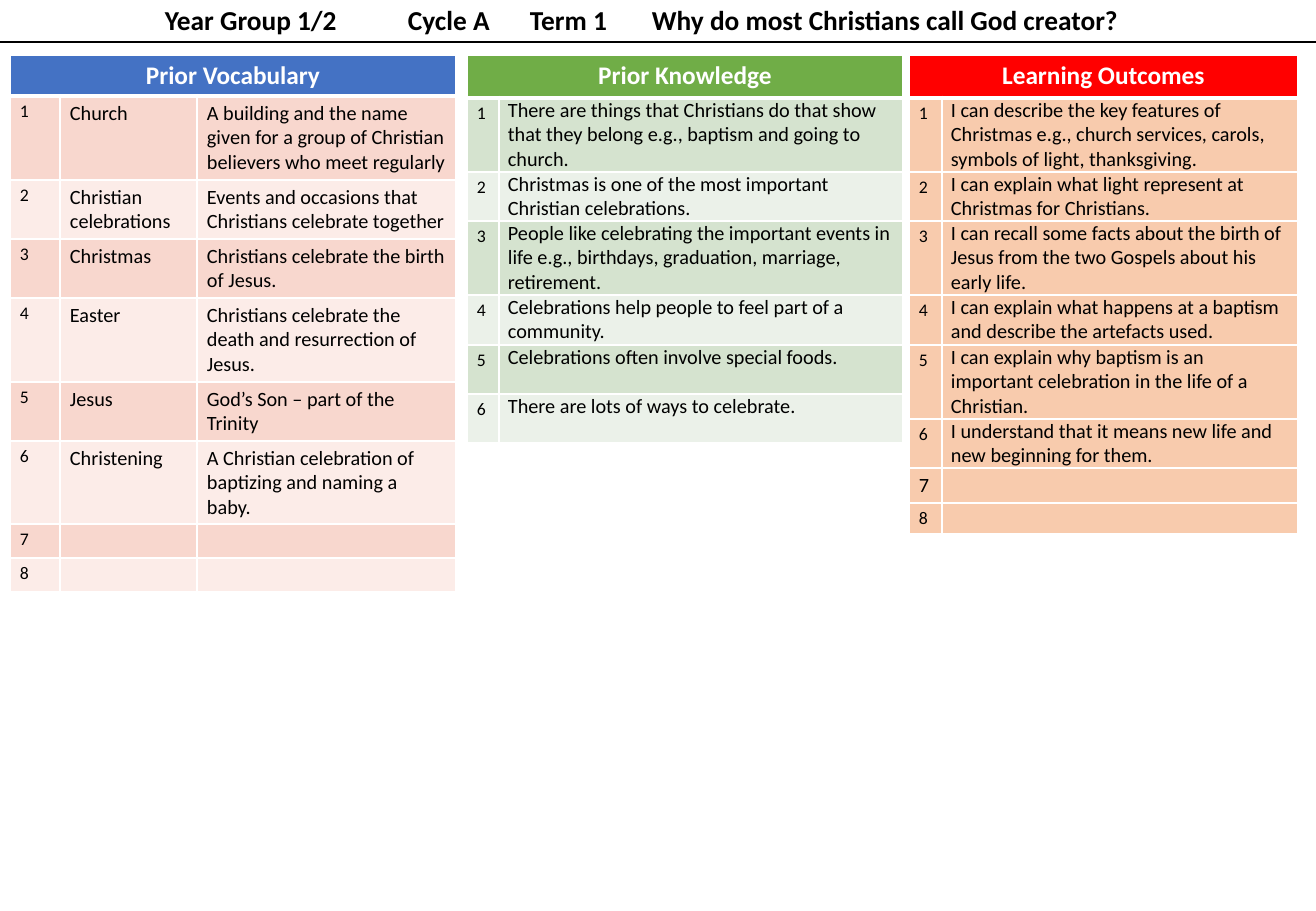
"""Build a Year 1/2 religious education knowledge organiser slide."""
import lxml.etree
import pptx
import pptx.dml.color
import pptx.enum.shapes
import pptx.enum.text
import pptx.oxml.ns
import pptx.util

EMU_PER_PX = 7526
FONT = "Calibri"
COLOURS = {
    "black": "000000", "white": "FFFFFF",
    "blue": "4472C4", "green": "70AD47", "red": "FF0000",
    "rose": "F8D7CE", "pale rose": "FCECE8",
    "sage": "D5E3CF", "pale sage": "EBF1E9", "peach": "F8CBAD",
}


def px(length):
    return pptx.util.Emu(length * EMU_PER_PX)


def write(paragraph, text, size, colour, bold=False):
    paragraph.text = text
    for run in paragraph.runs:
        run.font.name = FONT
        run.font.size = pptx.util.Pt(size)
        run.font.bold = bold
        run.font.color.rgb = pptx.dml.color.RGBColor.from_string(COLOURS[colour])
    if not text:
        lxml.etree.SubElement(paragraph._p, pptx.oxml.ns.qn("a:endParaRPr"), sz=str(int(size * 100)))


sections = [
    {
        "heading": "Prior Vocabulary", "colour": "blue", "bands": ["rose", "pale rose"],
        "left": 10, "columns": [50, 137, 259], "inset": (10, 5),
        "heights": [41, 84, 59, 59, 84, 59, 59, 34, 34],
        "entries": [
            ("Church", "A building and the name given for a group of Christian believers who meet regularly"),
            ("Christian celebrations", "Events and occasions that Christians celebrate together"),
            ("Christmas", "Christians celebrate the birth of Jesus."),
            ("Easter", "Christians celebrate the death and resurrection of Jesus."),
            ("Jesus", "God’s Son – part of the Trinity"),
            ("Christening", "A Christian celebration of baptizing and naming a baby."),
            ("", ""),
            ("", ""),
        ],
    },
    {
        "heading": "Prior Knowledge", "colour": "green", "bands": ["sage", "pale sage"],
        "left": 467, "columns": [32, 404], "inset": (9, 0),
        "heights": [43, 74, 49, 74, 50, 49, 49],
        "entries": [
            ("There are things that Christians do that show that they belong e.g., baptism and going to church.",),
            ("Christmas is one of the most important Christian celebrations.",),
            ("People like celebrating the important events in life e.g., birthdays, graduation, marriage, retirement.",),
            ("Celebrations help people to feel part of a community.",),
            ("Celebrations often involve special foods.",),
            ("There are lots of ways to celebrate.",),
        ],
    },
    {
        "heading": "Learning Outcomes", "colour": "red", "bands": ["peach", "peach"],
        "left": 909, "columns": [33, 356], "inset": (9, 0),
        "heights": [43, 74, 49, 74, 50, 74, 49, 35, 31],
        "entries": [
            ("I can describe the key features of Christmas e.g., church services, carols, symbols of light, thanksgiving.",),
            ("I can explain what light represent at Christmas for Christians.",),
            ("I can recall some facts about the birth of Jesus from the two Gospels about his early life.",),
            ("I can explain what happens at a baptism and describe the artefacts used.",),
            ("I can explain why baptism is an important celebration in the life of a Christian.",),
            ("I understand that it means new life and new beginning for them.",),
            ("",),
            ("",),
        ],
        "large numbers": [7],
    },
]

prs = pptx.Presentation()
prs.slide_width, prs.slide_height = px(1316), px(911)
slide = prs.slides.add_slide(prs.slide_layouts[6])

title = slide.shapes.add_textbox(px(103), px(6), px(1102), px(36)).text_frame
title.word_wrap = True
title.vertical_anchor = pptx.enum.text.MSO_ANCHOR.BOTTOM
title.margin_left, title.margin_right = px(62), 0
title.margin_top = title.margin_bottom = px(6)
topic = title.paragraphs[0]
topic.alignment = pptx.enum.text.PP_ALIGN.LEFT
topic.line_spacing = 0.9
tab_stops = lxml.etree.SubElement(topic._p.get_or_add_pPr(), pptx.oxml.ns.qn("a:tabLst"))
for stop in (243, 365, 487):
    lxml.etree.SubElement(tab_stops, pptx.oxml.ns.qn("a:tab"), pos=str(px(stop)), algn="l")
write(topic, "Year Group 1/2\tCycle A\tTerm 1\tWhy do most Christians call God creator?", 16.2, "black", True)

rule = slide.shapes.add_connector(pptx.enum.shapes.MSO_CONNECTOR.STRAIGHT, 0, px(42), px(1316), px(42))
rule.line.width = pptx.util.Pt(1.5)
rule.line.color.rgb = pptx.dml.color.RGBColor.from_string(COLOURS["black"])
lxml.etree.SubElement(rule._element.spPr, pptx.oxml.ns.qn("a:effectLst"))

for section in sections:
    columns, heights = section["columns"], section["heights"]
    table = slide.shapes.add_table(
        len(heights), len(columns), px(section["left"]), px(55), px(sum(columns)), px(sum(heights))
    ).table
    table.first_row = table.horz_banding = False
    for column, width in zip(table.columns, columns):
        column.width = px(width)
    for row, height in zip(table.rows, heights):
        row.height = px(height)
    table.cell(0, 0).merge(table.cell(0, len(columns) - 1))

    heading_row = (section["heading"],) + ("",) * (len(columns) - 1)
    numbered = [(str(n), *entry) for n, entry in enumerate(section["entries"], 1)]
    for r, texts in enumerate([heading_row, *numbered]):
        for c, text in enumerate(texts):
            cell = table.cell(r, c)
            side, top = section["inset"] if r and c and text else (10, 5)
            cell.margin_left = cell.margin_right = px(side)
            cell.margin_top = cell.margin_bottom = px(top)

            thick_edge = {0: "lnB", 1: "lnT"}.get(r)
            for edge in ("lnL", "lnR", "lnT", "lnB"):
                width = pptx.util.Pt(3 if edge == thick_edge else 1)
                border = lxml.etree.SubElement(
                    cell._tc.get_or_add_tcPr(), pptx.oxml.ns.qn("a:" + edge), w=str(width))
                paint = lxml.etree.SubElement(border, pptx.oxml.ns.qn("a:solidFill"))
                lxml.etree.SubElement(paint, pptx.oxml.ns.qn("a:srgbClr"), val=COLOURS["white"])

            fill = section["bands"][(r - 1) % 2] if r else section["colour"]
            cell.fill.solid()
            cell.fill.fore_color.rgb = pptx.dml.color.RGBColor.from_string(COLOURS[fill])

            paragraph = cell.text_frame.paragraphs[0]
            if r == 0:
                paragraph.alignment = pptx.enum.text.PP_ALIGN.CENTER
                write(paragraph, text, 15, "white", True)
            else:
                large = c and text or not c and r in section.get("large numbers", [])
                write(paragraph, text, 12 if large else 10.5, "black")

prs.save("out.pptx")
